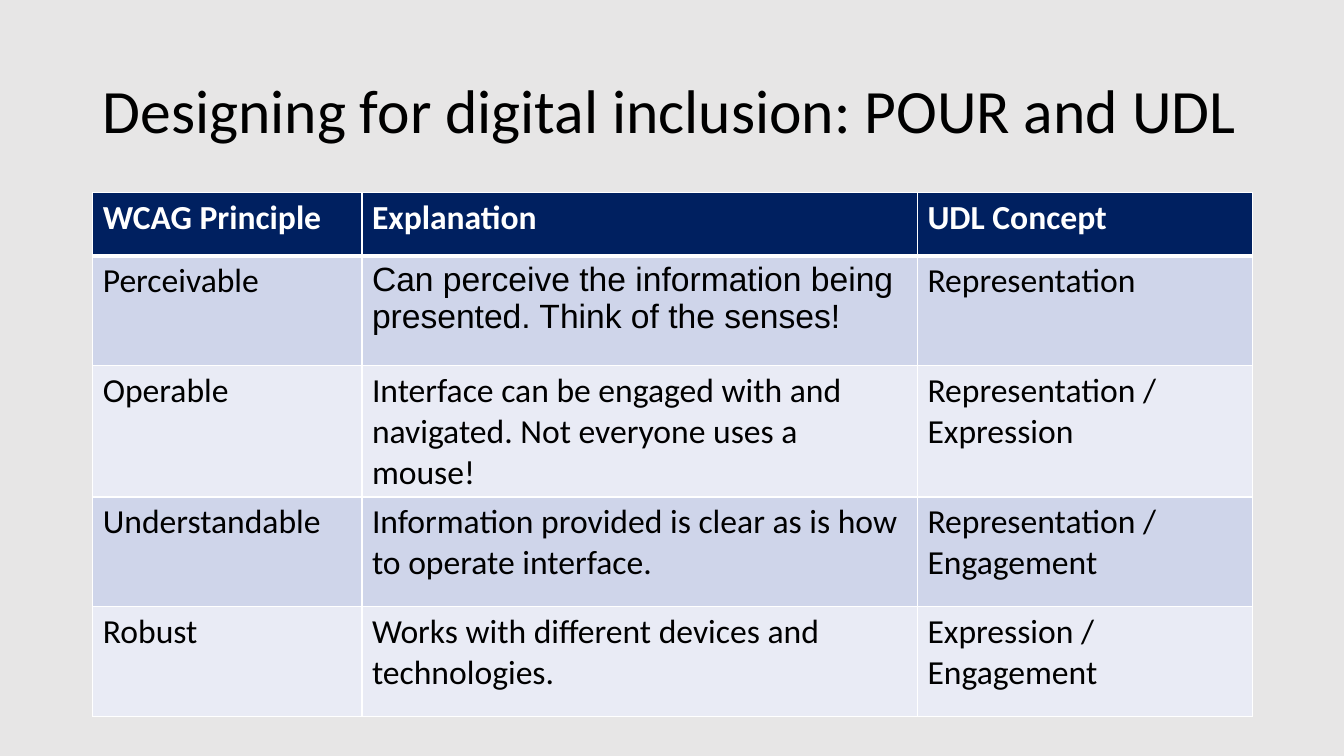
import dataclasses

import pptx
import pptx.dml.color
import pptx.enum.text
import pptx.oxml
import pptx.oxml.ns
import pptx.util

Inches = pptx.util.Inches
Pt = pptx.util.Pt


@dataclasses.dataclass(frozen=True)
class Theme:
    background: str = "E7E6E6"
    text: str = "000000"
    header_text: str = "FFFFFF"
    header_fill: str = "002060"
    band_fills: tuple = ("CFD5EA", "E9EBF5")
    border: str = "FFFFFF"
    thin_border: float = 1
    thick_border: float = 3
    font: str = "Calibri"
    accent_font: str = "Arial"
    title_size: int = 44
    table_size: int = 24


THEME = Theme()
TITLE = "Designing for digital inclusion: POUR and UDL"
COLUMN_WIDTHS = (2.67, 5.51, 3.32)
ROW_HEIGHTS = (0.63, 1.09, 1.09, 1.09, 1.09)
ROWS = (
    ("WCAG Principle", "Explanation", "UDL Concept"),
    ("Perceivable",
     "Can perceive the information being presented. Think of the senses!",
     "Representation"),
    ("Operable",
     "Interface can be engaged with and navigated. Not everyone uses a mouse!",
     "Representation / Expression"),
    ("Understandable",
     "Information provided is clear as is how to operate interface.",
     "Representation / Engagement"),
    ("Robust",
     "Works with different devices and technologies.",
     "Expression / Engagement"),
)
ARIAL_CELL = (1, 1)


def color(value):
    return pptx.dml.color.RGBColor.from_string(value)


def write_text(text_frame, text, font_color, **font_format):
    """Put one formatted run in the first paragraph and return the paragraph."""
    paragraph = text_frame.paragraphs[0]
    run = paragraph.add_run()
    run.text = text
    run.font.color.rgb = color(font_color)
    for name, value in font_format.items():
        setattr(run.font, name, value)
    return paragraph


def add_title(slide, left, top, width, height):
    shape = slide.shapes.add_textbox(
        Inches(left), Inches(top), Inches(width), Inches(height))
    frame_format = {
        "word_wrap": True,
        "vertical_anchor": pptx.enum.text.MSO_ANCHOR.MIDDLE,
    }
    for name, value in frame_format.items():
        setattr(shape.text_frame, name, value)
    paragraph = write_text(shape.text_frame, TITLE, THEME.text,
                           name=THEME.font, size=Pt(THEME.title_size))
    paragraph.line_spacing = 0.9


def set_borders(cell, row_index):
    widths = {side: THEME.thin_border for side in ("lnL", "lnR", "lnT", "lnB")}
    # The rule under the header is shared by the first two rows
    if row_index == 0:
        widths["lnB"] = THEME.thick_border
    elif row_index == 1:
        widths["lnT"] = THEME.thick_border
    properties = cell._tc.get_or_add_tcPr()
    for side, width in widths.items():
        properties.append(pptx.oxml.parse_xml(
            f'<a:{side} {pptx.oxml.ns.nsdecls("a")} w="{Pt(width)}">'
            f'<a:solidFill><a:srgbClr val="{THEME.border}"/></a:solidFill>'
            f'</a:{side}>'))


def add_principles_table(slide, left, top, width, height):
    table = slide.shapes.add_table(
        len(ROWS), len(COLUMN_WIDTHS),
        Inches(left), Inches(top), Inches(width), Inches(height)).table

    # Grid
    for column, column_width in zip(table.columns, COLUMN_WIDTHS):
        column.width = Inches(column_width)
    for row, row_height in zip(table.rows, ROW_HEIGHTS):
        row.height = Inches(row_height)

    # Cells
    for row_index, row in enumerate(ROWS):
        is_header = row_index == 0
        fill = THEME.header_fill if is_header else THEME.band_fills[(row_index - 1) % 2]
        font_color = THEME.header_text if is_header else THEME.text
        for column_index, text in enumerate(row):
            cell = table.cell(row_index, column_index)
            set_borders(cell, row_index)
            cell.fill.solid()
            cell.fill.fore_color.rgb = color(fill)
            is_arial = (row_index, column_index) == ARIAL_CELL
            write_text(cell.text_frame, text, font_color,
                       name=THEME.accent_font if is_arial else THEME.font,
                       size=Pt(THEME.table_size), bold=is_header)


def main():
    presentation = pptx.Presentation()
    presentation.slide_width = Inches(13.33)
    presentation.slide_height = Inches(7.5)
    slide = presentation.slides.add_slide(presentation.slide_layouts[6])
    slide.background.fill.solid()
    slide.background.fill.fore_color.rgb = color(THEME.background)

    left, width = 0.92, sum(COLUMN_WIDTHS)
    add_title(slide, left, 0.4, width, 1.45)
    add_principles_table(slide, left, 1.91, width, sum(ROW_HEIGHTS))
    presentation.save("out.pptx")


if __name__ == "__main__":
    main()
